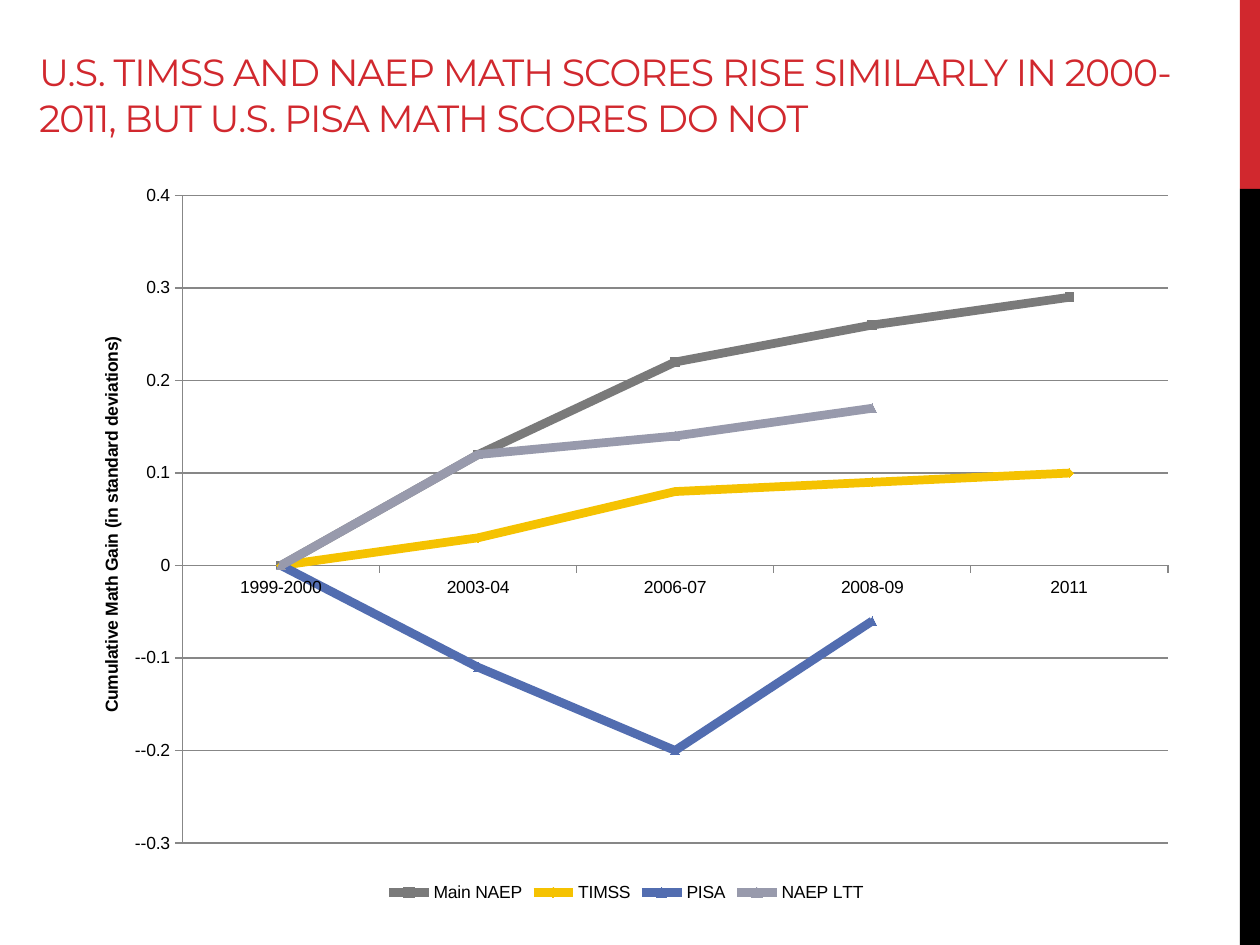
from pptx import Presentation
from pptx.chart.data import CategoryChartData
from pptx.dml.color import RGBColor
from pptx.enum import chart as charts, shapes, text
from pptx.oxml import parse_xml
from pptx.oxml.ns import nsdecls
from pptx.util import Inches, Pt

RED, BLACK, GREY = "D1282E", "000000", "878787"
CATEGORIES = ["1999-2000", "2003-04", "2006-07", "2008-09", "2011"]
SERIES = [
    ("Main NAEP", [0, 0.12, 0.22, 0.26, 0.29], "7A7A7A", charts.XL_MARKER_STYLE.SQUARE),
    ("TIMSS", [0, 0.03, 0.08, 0.09, 0.1], "F5C201", charts.XL_MARKER_STYLE.DIAMOND),
    ("PISA", [0, -0.11, -0.2, -0.06, None], "526DB0", charts.XL_MARKER_STYLE.TRIANGLE),
    ("NAEP LTT", [0, 0.12, 0.14, 0.17, None], "989AAC", charts.XL_MARKER_STYLE.TRIANGLE),
]


def color(value):
    return RGBColor.from_string(value)


def set_text(frame, content, *, size, font, fill, bold=False, spacing=None):
    paragraph = frame.paragraphs[0]
    run = paragraph.add_run()
    run.text = content
    run.font.size = Pt(size)
    run.font.name = font
    run.font.bold = bold
    run.font.color.rgb = color(fill)
    if spacing is not None:
        run.font._element.set("spc", str(round(spacing * 100)))
    return paragraph


def add_side_bar(slide, left, top, width, height):
    """Vertical band: red in its top fifth, black below."""
    red_height = height / 5
    for offset, part, fill in ((0, red_height, RED), (red_height, height - red_height, BLACK)):
        shape = slide.shapes.add_shape(
            shapes.MSO_SHAPE.RECTANGLE,
            Inches(left), Inches(top + offset), Inches(width), Inches(part))
        shape.shadow.inherit = False
        shape.fill.solid()
        shape.fill.fore_color.rgb = color(fill)
        shape.line.fill.background()


def place_title(slide, content, left, top, width, height):
    title = slide.shapes.title
    title.left, title.top = Inches(left), Inches(top)
    title.width, title.height = Inches(width), Inches(height)
    frame = title.text_frame
    frame.word_wrap = True
    frame.auto_size = text.MSO_AUTO_SIZE.NONE
    frame.vertical_anchor = text.MSO_ANCHOR.BOTTOM
    paragraph = set_text(frame, content, size=21.6, font="Montserrat", fill=RED, spacing=-0.6)
    paragraph.alignment = text.PP_ALIGN.LEFT
    paragraph.space_before = Pt(0)


def set_layout(parent, index, target="", **fractions):
    """Place a chart part by fractions (x, y, w, h) of the chart."""
    values = "".join(f'<c:{key} val="{value}"/>' for key, value in fractions.items())
    layout = parse_xml(
        f'<c:layout {nsdecls("c")}><c:manualLayout>{target}'
        f'<c:xMode val="edge"/><c:yMode val="edge"/>{values}</c:manualLayout></c:layout>')
    for existing in parent.findall(layout.tag):
        parent.remove(existing)
    parent.insert(index, layout)


def format_axes(chart):
    category_axis, value_axis = chart.category_axis, chart.value_axis
    for axis in (category_axis, value_axis):
        axis.major_tick_mark = charts.XL_TICK_MARK.OUTSIDE
        axis.minor_tick_mark = charts.XL_TICK_MARK.NONE
        axis.format.line.color.rgb = color(GREY)
        axis.format.line.width = Pt(0.75)
    category_axis.has_major_gridlines = False
    value_axis.has_major_gridlines = True
    value_axis.major_gridlines.format.line.color.rgb = color(GREY)
    value_axis.major_gridlines.format.line.width = Pt(0.75)
    value_axis.minimum_scale, value_axis.maximum_scale = -0.3, 0.4
    value_axis.major_unit = 0.1
    value_axis.tick_labels.number_format = "[<-0.05]-0.0;[<0.05]0;0.0"
    value_axis.tick_labels.number_format_is_linked = False
    axis_title = value_axis.axis_title
    set_text(axis_title.text_frame, "Cumulative Math Gain (in standard deviations)",
             size=10, font="Arial", fill=BLACK, bold=True)
    set_layout(axis_title._element, 1, x=0.03, y=0.22)


def add_score_chart(slide, left, top, width, height):
    data = CategoryChartData()
    data.categories = CATEGORIES
    for name, values, _, _ in SERIES:
        data.add_series(name, values)
    chart = slide.shapes.add_chart(
        charts.XL_CHART_TYPE.LINE_MARKERS,
        Inches(left), Inches(top), Inches(width), Inches(height), data).chart
    chart.has_title = False
    chart.font.size = Pt(10)
    chart.font.name = "Arial"
    chart.font.color.rgb = color(BLACK)
    chart.has_legend = True
    chart.legend.position = charts.XL_LEGEND_POSITION.BOTTOM
    chart.legend.include_in_layout = False
    format_axes(chart)
    set_layout(chart._chartSpace.chart.plotArea, 0, '<c:layoutTarget val="inner"/>',
               x=0.106, y=0.033, w=0.875, h=0.88)
    plot = chart.plots[0]
    plot.vary_by_categories = False
    for series, (_, _, fill, marker) in zip(plot.series, SERIES):
        series.smooth = False
        series.format.line.color.rgb = color(fill)
        series.format.line.width = Pt(5)
        series.marker.style = marker
        series.marker.size = 5
        series.marker.format.fill.solid()
        series.marker.format.fill.fore_color.rgb = color(fill)
        series.marker.format.line.color.rgb = color(fill)


def main():
    presentation = Presentation()
    presentation.slide_width, presentation.slide_height = Inches(10), Inches(7.5)
    slide = presentation.slides.add_slide(presentation.slide_layouts[5])
    add_side_bar(slide, 9.84, 0, 0.16, 7.5)
    place_title(slide, "U.S. TIMSS AND NAEP MATH SCORES RISE SIMILARLY IN 2000-2011, "
                "BUT U.S. PISA MATH SCORES DO NOT", 0.21, 0.17, 9.23, 0.99)
    add_score_chart(slide, 0.5, 1.36, 8.94, 5.84)
    presentation.save("out.pptx")


if __name__ == "__main__":
    main()
